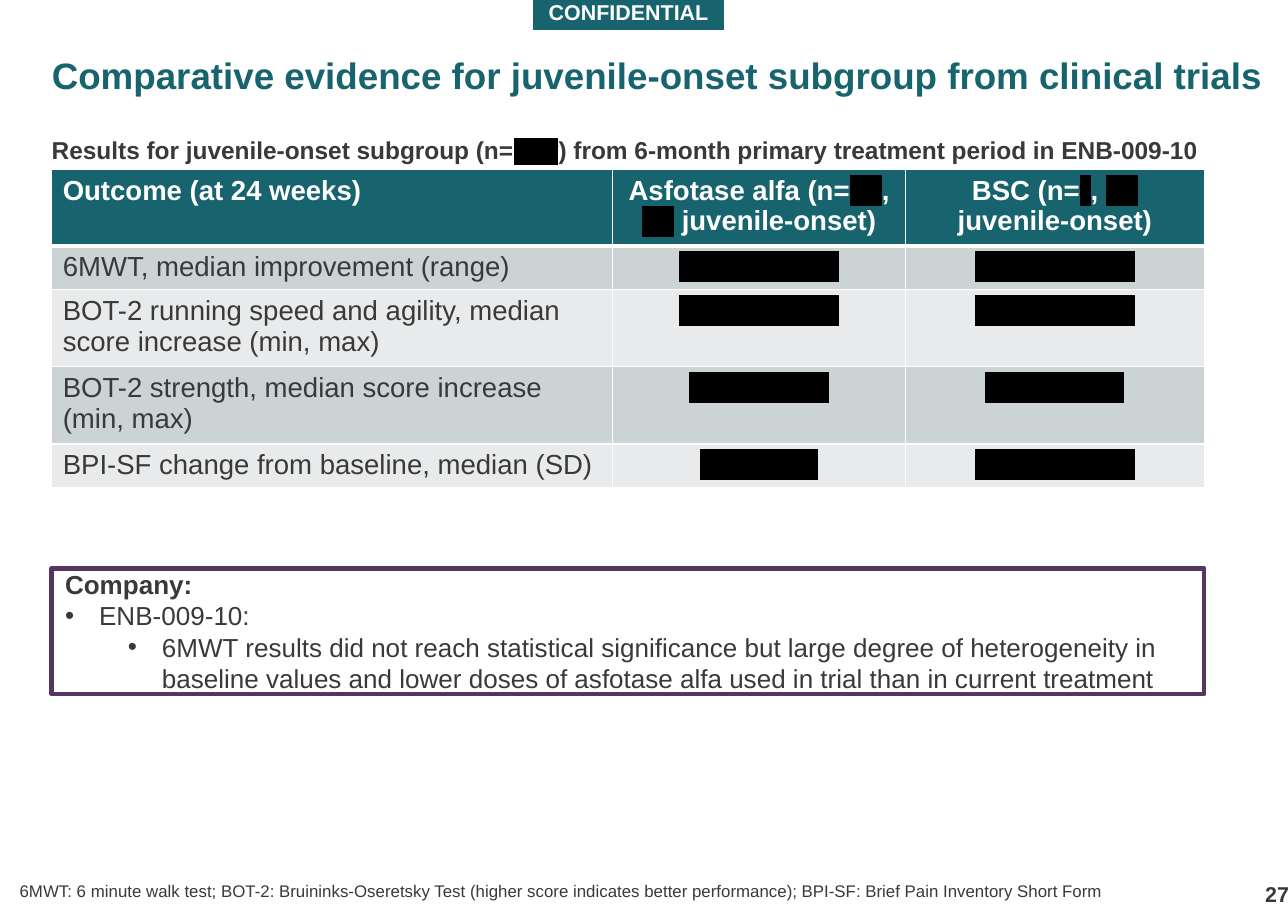
from lxml import etree
from pptx import Presentation
from pptx import util as u
from pptx.dml.color import RGBColor
from pptx.enum import shapes, text
from pptx.oxml import ns

TEAL, PURPLE, INK = "18646E", "573562", "393938"
WHITE, BLACK = "FFFFFF", "000000"
BANDS = "CCD3D5", "E8EAEB"

HEADERS = ["Outcome (at 24 weeks)",
           "Asfotase alfa (n=|***|, |***| juvenile-onset)",
           "BSC (n=|*|, |***| juvenile-onset)"]
# Outcome, then the number of redacted characters in each arm
OUTCOMES = [
    ("6MWT, median improvement (range)", 15, 15),
    ("BOT-2 running speed and agility, median score increase (min, max)", 15, 15),
    ("BOT-2 strength, median score increase (min, max)", 13, 13),
    ("BPI-SF change from baseline, median (SD)", 11, 15),
]
COLUMN_WIDTHS = 5.09, 2.66, 2.71
ROW_HEIGHTS = 0.69, 0.4, 0.7, 0.7, 0.4


def color(value):
    return RGBColor.from_string(value)


def child(parent, tag, **attributes):
    return etree.SubElement(parent, ns.qn(tag), attributes)


def apply(target, formats):
    for name, value in formats.items():
        setattr(target, name, value)


class SlideBuilder:
    font = "Arial"

    def __init__(self, page):
        self.page = page

    def add_words(self, para, words, size, ink=INK, bold=False, **formats):
        """Fill a paragraph; every second part between bars is blacked out."""
        apply(para, formats)
        for index, part in enumerate(words.split("|")):
            if not part:
                continue
            redacted = index % 2 == 1
            span = para.add_run()
            span.text = part
            span.font.color.rgb = color(BLACK if redacted else ink)
            if redacted:
                fill = span._r.get_or_add_rPr().find(ns.qn("a:solidFill"))
                highlight = etree.Element(ns.qn("a:highlight"))
                child(highlight, "a:srgbClr", val=BLACK)
                fill.addnext(highlight)
            apply(span.font, {"name": self.font, "size": u.Pt(size),
                              "bold": bold, "underline": redacted})

    def frame(self, box, inset=(0, 0), anchor=text.MSO_ANCHOR.TOP):
        frame = box.text_frame
        across, down = map(u.Inches, inset)
        apply(frame, {"word_wrap": True, "auto_size": text.MSO_AUTO_SIZE.NONE,
                      "vertical_anchor": anchor,
                      "margin_left": across, "margin_right": across,
                      "margin_top": down, "margin_bottom": down})
        return frame

    def place(self, box, at):
        apply(box, dict(zip(("left", "top", "width", "height"), map(u.Inches, at))))

    def title(self, words, at):
        box = self.page.shapes.title
        self.place(box, at)
        self.add_words(self.frame(box).paragraphs[0], words, 24, TEAL, True,
                       alignment=text.PP_ALIGN.LEFT, line_spacing=u.Pt(42))

    def label(self, words, at, size, bold=False, inset=(0, 0),
              anchor=text.MSO_ANCHOR.TOP, align=text.PP_ALIGN.LEFT):
        box = self.page.shapes.add_textbox(*map(u.Inches, at))
        para = self.frame(box, inset, anchor).paragraphs[0]
        self.add_words(para, words, size, bold=bold, alignment=align)

    def banner(self, words, at):
        box = self.page.shapes.add_shape(shapes.MSO_SHAPE.RECTANGLE, *map(u.Inches, at))
        box.shadow.inherit = False
        box.fill.solid()
        box.fill.fore_color.rgb = box.line.color.rgb = color(TEAL)
        box.line.width = u.Pt(0.75)
        frame = self.frame(box, (0.04, 0.04), text.MSO_ANCHOR.MIDDLE)
        self.add_words(frame.paragraphs[0], words, 14, WHITE, True,
                       alignment=text.PP_ALIGN.CENTER)

    def outlined_list(self, items, at):
        """Put (words, level, left margin, bulleted) items in the body placeholder."""
        box = self.page.placeholders[1]
        self.place(box, at)
        box.line.color.rgb = color(PURPLE)
        box.line.width = u.Pt(3)
        frame = self.frame(box, anchor=text.MSO_ANCHOR.MIDDLE)
        for index, (words, level, margin, bulleted) in enumerate(items):
            para = frame.add_paragraph() if index else frame.paragraphs[0]
            para.level = level
            settings = para._p.get_or_add_pPr()
            settings.set("marL", str(u.Inches(margin)))
            settings.set("indent", str(u.Inches(-0.31 if bulleted else 0)))
            if bulleted:
                child(settings, "a:buFont", typeface=self.font)
                child(settings, "a:buChar", char="•")
            else:
                child(settings, "a:buNone")
            self.add_words(para, words, 17, bold=not bulleted, space_before=u.Pt(0),
                           alignment=text.PP_ALIGN.LEFT)

    def borders(self, cell, widths):
        settings = cell._tc.get_or_add_tcPr()
        for side, width in widths.items():
            line = child(settings, f"a:ln{side}", w=str(u.Pt(width)))
            child(child(line, "a:solidFill"), "a:srgbClr", val=WHITE)

    def table(self, rows, left, top):
        size = sum(COLUMN_WIDTHS), sum(ROW_HEIGHTS)
        grid = self.page.shapes.add_table(len(rows), len(COLUMN_WIDTHS),
                                          *map(u.Inches, (left, top, *size))).table
        for column, width in zip(grid.columns, COLUMN_WIDTHS):
            column.width = u.Inches(width)
        for row, height in zip(grid.rows, ROW_HEIGHTS):
            row.height = u.Inches(height)
        for r, row in enumerate(rows):
            header = r == 0
            for c, words in enumerate(row):
                cell = grid.cell(r, c)
                self.borders(cell, {"L": 1, "R": 1, "T": 3 if r == 1 else 1,
                                    "B": 3 if header else 1})
                cell.fill.solid()
                cell.fill.fore_color.rgb = color(TEAL if header else BANDS[(r - 1) % 2])
                align = text.PP_ALIGN.CENTER if c else text.PP_ALIGN.LEFT
                self.add_words(cell.text_frame.paragraphs[0], words, 18,
                               WHITE if header else INK, header, alignment=align)


def main():
    deck = Presentation()
    apply(deck, {"slide_width": u.Inches(11.69), "slide_height": u.Inches(8.27)})
    slide = SlideBuilder(deck.slides.add_slide(deck.slide_layouts[1]))

    slide.title("Comparative evidence for juvenile-onset subgroup from clinical trials",
                (0.47, 0.3, 11.14, 0.74))
    slide.label("27", (11.15, 7.87, 0.55, 0.36), 14, bold=True,
                anchor=text.MSO_ANCHOR.BOTTOM, align=text.PP_ALIGN.RIGHT)
    slide.label("Results for juvenile-onset subgroup (n=| ****|) from 6-month primary "
                "treatment period in ENB-009-10", (0.47, 1.23, 10.6, 0.27), 16, bold=True)
    results = [(outcome, *(f"|{'*' * count}|" for count in counts))
               for outcome, *counts in OUTCOMES]
    slide.table([HEADERS, *results], 0.47, 1.54)
    slide.banner("CONFIDENTIAL", (4.84, -0.05, 1.73, 0.32))
    slide.label("6MWT: 6 minute walk test; BOT-2: Bruininks-Oseretsky Test (higher score "
                "indicates better performance); BPI-SF: Brief Pain Inventory Short Form",
                (0.08, 7.95, 10.6, 0.29), 11, inset=(0.1, 0.05))
    slide.outlined_list([
        ("Company:", 0, 0.12, False),
        ("ENB-009-10:", 0, 0.43, True),
        ("6MWT results did not reach statistical significance but large degree of "
         "heterogeneity in baseline values and lower doses of asfotase alfa used in "
         "trial than in current treatment", 1, 1, True),
    ], (0.47, 5.16, 10.46, 1.14))
    deck.save("out.pptx")


if __name__ == "__main__":
    main()
